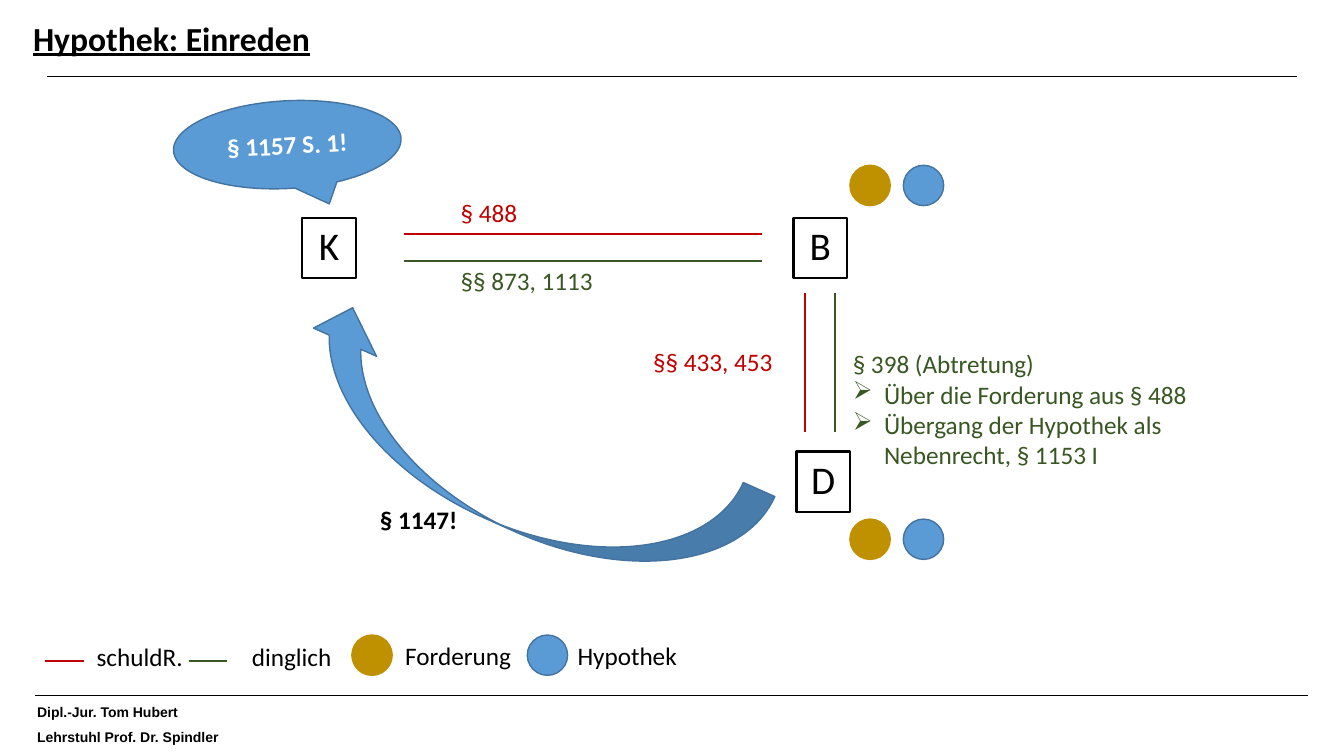
from lxml.etree import SubElement
from pptx import Presentation
from pptx.dml.color import RGBColor
from pptx.enum.shapes import MSO_CONNECTOR, MSO_SHAPE
from pptx.enum.text import MSO_ANCHOR, PP_ALIGN
from pptx.oxml.ns import qn
from pptx.util import Inches, Pt

BLACK = RGBColor(0x00, 0x00, 0x00)
WHITE = RGBColor(0xFF, 0xFF, 0xFF)
RED = RGBColor(0xC0, 0x00, 0x00)
GREEN = RGBColor(0x38, 0x57, 0x23)
GOLD = RGBColor(0xBF, 0x90, 0x00)
BLUE = RGBColor(0x5B, 0x9B, 0xD5)
NAVY = RGBColor(0x43, 0x73, 0x9E)

BODY = {"name": "Calibri", "size": Pt(18)}
BOLD = {**BODY, "bold": True}
TITLE = {**BOLD, "size": Pt(24), "underline": True}
PARTY = {**BODY, "size": Pt(28)}
FOOT = {"name": "Arial", "size": Pt(10), "bold": True}
DOT = 0.4


class Board:
    def __init__(self, slide):
        self.shapes = slide.shapes

    def add_words(self, para, text, style, color):
        run = para.add_run()
        run.text = text
        for key, value in style.items():
            setattr(run.font, key, value)
        run.font.color.rgb = color

    def line(self, x1, y1, x2, y2, color=BLACK, width=1.5):
        link = self.shapes.add_connector(
            MSO_CONNECTOR.STRAIGHT, *map(Inches, (x1, y1, x2, y2)))
        link.line.color.rgb = color
        link.line.width = Pt(width)
        SubElement(link._element.spPr, qn("a:effectLst"))

    def text(self, x, y, w, h, text, style=BODY, color=BLACK, wrap=True):
        box = self.shapes.add_textbox(*map(Inches, (x, y, w, h)))
        frame = box.text_frame
        frame.word_wrap = wrap
        self.add_words(frame.paragraphs[0], text, style, color)
        return frame

    def bullet(self, frame, text, color):
        para = frame.add_paragraph()
        props = para._p.get_or_add_pPr()
        props.set("marL", str(Inches(0.31)))
        props.set("indent", str(-Inches(0.31)))
        SubElement(props, qn("a:buChar")).set("char", "➢")
        self.add_words(para, text, BODY, color)

    def shape(self, kind, x, y, w, h, fill, edge, width=1, turn=0):
        form = self.shapes.add_shape(kind, *map(Inches, (x, y, w, h)))
        form.shadow.inherit = False
        form.rotation = turn
        if fill is None:
            form.fill.background()
        else:
            form.fill.solid()
            form.fill.fore_color.rgb = fill
        form.line.color.rgb = edge
        form.line.width = Pt(width)
        return form

    def label(self, form, text, style, color):
        """Centre one line of text in a shape."""
        frame = form.text_frame
        frame.vertical_anchor = MSO_ANCHOR.MIDDLE
        para = frame.paragraphs[0]
        para.alignment = PP_ALIGN.CENTER
        self.add_words(para, text, style, color)
        return para

    def party(self, x, y, name):
        box = self.shape(MSO_SHAPE.RECTANGLE, x, y, 0.53, 0.6, None, BLACK, 1.5)
        para = self.label(box, name, PARTY, BLACK)
        para.line_spacing = 0.9
        para.space_before = Pt(10)

    def dot(self, x, y, fill, edge):
        self.shape(MSO_SHAPE.OVAL, x, y, DOT, DOT, fill, edge)


def main():
    deck = Presentation()
    deck.slide_width, deck.slide_height = Inches(13.33), Inches(7.5)
    board = Board(deck.slides.add_slide(deck.slide_layouts[6]))

    # Frame of the page
    board.line(0.47, 0.76, 12.86, 0.76, width=1)
    board.line(0.35, 6.9, 12.97, 6.9, width=1)
    board.text(0.27, 7.18, 2.07, 0.27, "Lehrstuhl Prof. Dr. Spindler", FOOT, wrap=False)
    board.text(0.27, 6.93, 1.63, 0.27, "Dipl.-Jur. Tom Hubert", FOOT, wrap=False)
    title = board.text(0.23, 0.13, 12.63, 0.54, "Hypothek: Einreden", TITLE)
    title.vertical_anchor = MSO_ANCHOR.MIDDLE
    title.paragraphs[0].line_spacing = 0.9

    # Parties and their legal ties
    for x, y, name in ((3, 2.16, "K"), (7.87, 2.16, "B"), (7.9, 4.48, "D")):
        board.party(x, y, name)
    for y, color in ((2.32, RED), (2.59, GREEN)):
        board.line(4.01, y, 7.56, y, color)
    for x, color in ((7.98, RED), (8.28, GREEN)):
        board.line(x, 2.91, x, 4.29, color)
    board.text(4.47, 1.91, 2.83, 0.4, "§ 488", color=RED)
    board.text(4.47, 2.58, 2.28, 0.4, "§§ 873, 1113", color=GREEN)
    board.text(6.38, 3.39, 1.6, 0.4, "§§ 433, 453", color=RED)
    deed = board.text(8.36, 3.41, 4.1, 1.31, "§ 398 (Abtretung)", color=GREEN)
    for item in ("Über die Forderung aus § 488",
                 "Übergang der Hypothek als Nebenrecht, § 1153 I"):
        board.bullet(deed, item, GREEN)

    # Claim and mortgage held by B, then by D
    for y in (1.64, 5.15):
        board.dot(8.43, y, GOLD, GOLD)
        board.dot(8.96, y, BLUE, NAVY)

    # Legend
    for x, color, left, name in ((0.45, RED, 0.86, "schuldR."),
                                 (1.87, GREEN, 2.4, "dinglich")):
        board.line(x, 6.56, x + 0.38, 6.56, color)
        board.text(left, 6.31, 1.1, 0.4, name)
    for x, fill, edge, left, name in ((3.49, GOLD, GOLD, 3.92, "Forderung"),
                                      (5.23, BLUE, NAVY, 5.63, "Hypothek")):
        board.dot(x, 6.3, fill, edge)
        board.text(left, 6.3, 1.4, 0.4, name)

    # Enforcement by D and the defence of K
    board.text(3.67, 4.95, 1.14, 0.4, "§ 1147!", BOLD)
    board.shape(MSO_SHAPE.CURVED_DOWN_ARROW, 2.69, 3.86, 4.93, 1.37,
                BLUE, NAVY, turn=204.1)
    reply = board.shape(MSO_SHAPE.OVAL_CALLOUT, 1.72, 1, 2.26, 0.87,
                        BLUE, NAVY, turn=356.9)
    reply.adjustments[0], reply.adjustments[1] = 0.17, 0.7
    board.label(reply, "§ 1157 S. 1!", BOLD, WHITE)

    deck.save("out.pptx")


if __name__ == "__main__":
    main()
